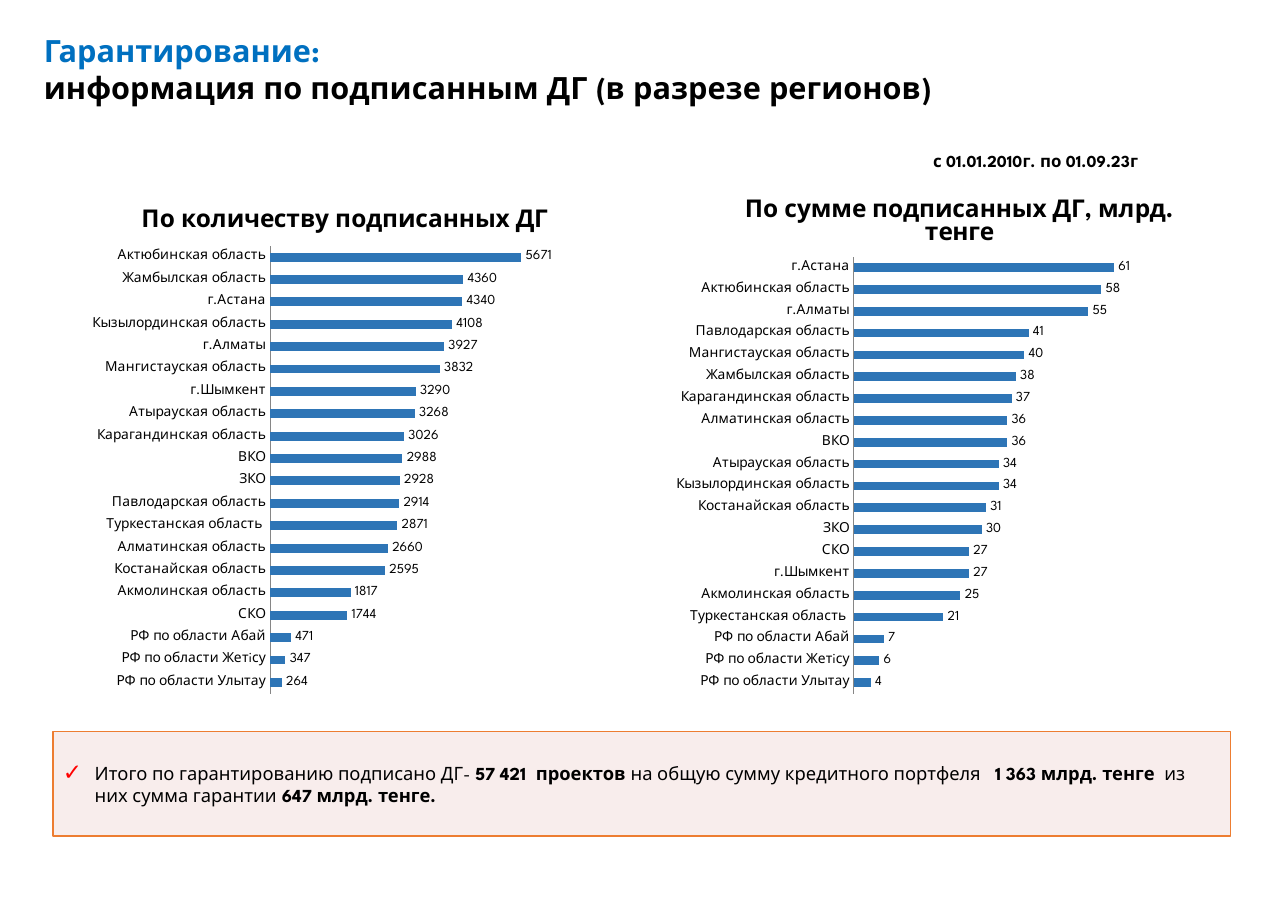
"""Builds the slide on signed guarantee agreements by region."""
from lxml.etree import SubElement
from pptx import Presentation
from pptx.chart.data import CategoryChartData
from pptx.dml.color import RGBColor
from pptx.enum.chart import XL_CHART_TYPE, XL_LABEL_POSITION, XL_TICK_MARK
from pptx.enum.shapes import MSO_SHAPE
from pptx.enum.text import MSO_ANCHOR, MSO_AUTO_SIZE, PP_ALIGN
from pptx.oxml import parse_xml
from pptx.oxml.ns import nsdecls, qn
from pptx.util import Pt

COLORS = {
    "text": "000000",
    "accent": "0070C0",
    "bar": "2E75B6",
    "axis": "868686",
    "panel": "F2DCDB",
    "border": "ED7D31",
    "check": "FF0000",
}
EMU_PER_PX = 9144

COUNT_BY_REGION = {
    "РФ по области Улытау": 264,
    "РФ по области Жетiсу": 347,
    "РФ по области Абай": 471,
    "СКО": 1744,
    "Акмолинская область": 1817,
    "Костанайская область": 2595,
    "Алматинская область": 2660,
    "Туркестанская область ": 2871,
    "Павлодарская область": 2914,
    "ЗКО": 2928,
    "ВКО": 2988,
    "Карагандинская область": 3026,
    "Атырауская область": 3268,
    "г.Шымкент": 3290,
    "Мангистауская область": 3832,
    "г.Алматы": 3927,
    "Кызылординская область": 4108,
    "г.Астана": 4340,
    "Жамбылская область": 4360,
    "Актюбинская область": 5671,
}
SUM_BY_REGION = {
    "РФ по области Улытау": 4,
    "РФ по области Жетiсу": 6,
    "РФ по области Абай": 7,
    "Туркестанская область ": 21,
    "Акмолинская область": 25,
    "г.Шымкент": 27,
    "СКО": 27,
    "ЗКО": 30,
    "Костанайская область": 31,
    "Кызылординская область": 34,
    "Атырауская область": 34,
    "ВКО": 36,
    "Алматинская область": 36,
    "Карагандинская область": 37,
    "Жамбылская область": 38,
    "Мангистауская область": 40,
    "Павлодарская область": 41,
    "г.Алматы": 55,
    "Актюбинская область": 58,
    "г.Астана": 61,
}
TOTALS = [
    ("Итого по гарантированию подписано ДГ- ", False),
    ("57 421  проектов ", True),
    ("на общую сумму кредитного портфеля  ", False),
    (" 1 363 млрд. тенге  ", True),
    ("из них сумма гарантии", False),
    (" 647 млрд. тенге.", True),
]


class SlideBuilder:
    """Draws styled elements on one slide."""

    font_name = "League Spartan"

    def __init__(self, slide):
        self.slide = slide

    def px(self, *lengths):
        return [length * EMU_PER_PX for length in lengths]

    def color(self, name):
        return RGBColor.from_string(COLORS[name])

    def style(self, font, size, color="text", bold=False):
        font.name = self.font_name
        font.size = Pt(size)
        font.bold = bold
        font.color.rgb = self.color(color)

    def heading(self, box, text, size, colors, wrap=True):
        frame = self.slide.shapes.add_textbox(*self.px(*box)).text_frame
        frame.word_wrap = wrap
        frame.auto_size = MSO_AUTO_SIZE.SHAPE_TO_FIT_TEXT
        frame.text = text
        for run, color in zip(frame.paragraphs[0].runs, colors):
            self.style(run.font, size, color, bold=True)

    def panel(self, box, segments, size):
        panel = self.slide.shapes.add_shape(MSO_SHAPE.RECTANGLE, *self.px(*box))
        panel.shadow.inherit = False
        panel.fill.solid()
        panel.fill.fore_color.rgb = self.color("panel")
        tint = panel.fill._xPr.find(qn("a:solidFill"))[0]
        SubElement(tint, qn("a:alpha"), val="50000")
        panel.line.color.rgb = self.color("border")
        panel.line.width = Pt(1)
        frame = panel.text_frame
        frame.word_wrap = True
        frame.vertical_anchor = MSO_ANCHOR.MIDDLE
        frame.margin_left, frame.margin_top = self.px(8, 4)
        frame.margin_right, frame.margin_bottom = self.px(8, 4)
        paragraph = frame.paragraphs[0]
        paragraph.alignment = PP_ALIGN.LEFT
        paragraph.space_after = Pt(6)
        self.check_bullet(paragraph)
        for text, bold in segments:
            run = paragraph.add_run()
            run.text = text
            self.style(run.font, size, bold=bold)

    def check_bullet(self, paragraph):
        properties = paragraph._p.get_or_add_pPr()
        margin, indent = self.px(30, -29)
        properties.set("marL", str(margin))
        properties.set("indent", str(indent))
        bullet_color = SubElement(properties, qn("a:buClr"))
        SubElement(bullet_color, qn("a:srgbClr"), val=COLORS["check"])
        SubElement(properties, qn("a:buSzPct"), val="125000")
        SubElement(properties, qn("a:buFont"), typeface="Wingdings")
        properties[-1].set("typeface", "Arial")
        SubElement(properties, qn("a:buChar"), char="✓")

    def place(self, parent, **fractions):
        """Sets a manual layout on a chart title or plot area."""
        target = '<c:layoutTarget val="inner"/>' if "w" in fractions else ""
        modes = "".join(f'<c:{key}Mode val="edge"/>' for key in "xy")
        sizes = "".join(f'<c:{key} val="{value}"/>' for key, value in fractions.items())
        layout = parse_xml(
            f'<c:layout {nsdecls("c")}><c:manualLayout>{target}{modes}{sizes}'
            "</c:manualLayout></c:layout>"
        )
        for old in parent.findall(qn("c:layout")):
            parent.remove(old)
        text = parent.find(qn("c:tx"))
        parent.insert(0 if text is None else 1, layout)

    def bar_chart(self, box, title, title_at, plot_at, values, maximum, number_format):
        data = CategoryChartData()
        data.categories = list(values)
        data.add_series("Series 1", list(values.values()))
        chart = self.slide.shapes.add_chart(
            XL_CHART_TYPE.BAR_CLUSTERED, *self.px(*box), data
        ).chart
        chart.has_legend = False
        self.style(chart.font, 9)
        chart.has_title = True
        chart.chart_title.text_frame.text = title
        self.style(chart.chart_title.text_frame.paragraphs[0].runs[0].font, 16, bold=True)
        chart.chart_title.include_in_layout = False
        self.place(chart.chart_title._element, **dict(zip("xy", title_at)))

        regions, amounts = chart.category_axis, chart.value_axis
        regions.major_tick_mark = XL_TICK_MARK.NONE
        regions.format.line.color.rgb = self.color("axis")
        self.style(regions.tick_labels.font, 9)
        amounts.visible = False
        amounts.has_major_gridlines = False
        amounts.minimum_scale, amounts.maximum_scale = 0, maximum

        plot = chart.plots[0]
        self.place(plot._element.getparent(), **dict(zip("xywh", plot_at)))
        plot.gap_width = 150
        plot.vary_by_categories = False
        plot.series[0].format.fill.solid()
        plot.series[0].format.fill.fore_color.rgb = self.color("bar")
        plot.has_data_labels = True
        labels = plot.data_labels
        labels.show_value = True
        labels.position = XL_LABEL_POSITION.OUTSIDE_END
        labels.number_format = number_format
        labels.number_format_is_linked = False
        self.style(labels.font, 9)


def main():
    deck = Presentation()
    deck.slide_width, deck.slide_height = 1169 * EMU_PER_PX, 827 * EMU_PER_PX
    page = SlideBuilder(deck.slides.add_slide(deck.slide_layouts[6]))
    page.heading((30, 24, 839, 77),
                 "Гарантирование: \vинформация по подписанным ДГ (в разрезе регионов)",
                 20, ["accent", "text"])
    page.heading((837, 132, 217, 29), "с 01.01.2010г. по 01.09.23г", 11, ["text"], wrap=False)
    page.panel((48, 664, 1069, 95), TOTALS, 12)
    page.bar_chart((59, 170, 503, 484), "По количеству подписанных ДГ", (0.13, 0.03),
                   (0.37, 0.11, 0.48, 0.84), COUNT_BY_REGION, 6000, "General")
    page.bar_chart((569, 170, 542, 484), "По сумме подписанных ДГ, млрд. тенге", (0.19, 0.01),
                   (0.38, 0.13, 0.5, 0.82), SUM_BY_REGION, 70, "#,##0")
    deck.save("out.pptx")


if __name__ == "__main__":
    main()
